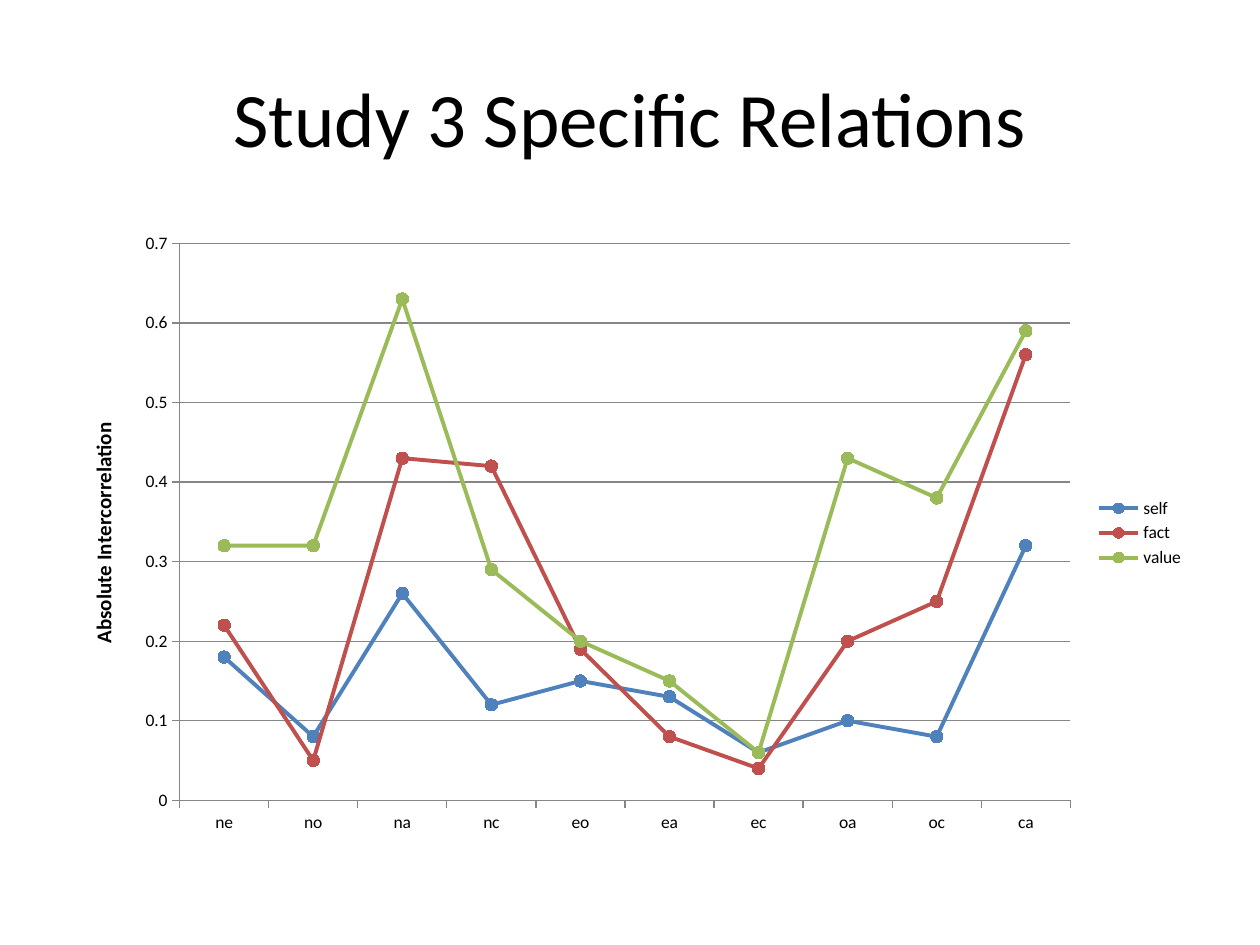
from pptx import Presentation
from pptx.chart.data import CategoryChartData
from pptx.dml.color import RGBColor
from pptx.enum.chart import XL_CHART_TYPE as ChartType
from pptx.enum.chart import XL_LEGEND_POSITION as LegendPosition
from pptx.enum.chart import XL_MARKER_STYLE as MarkerStyle
from pptx.enum.chart import XL_TICK_MARK as TickMark
from pptx.enum.text import MSO_ANCHOR as Anchor
from pptx.enum.text import PP_ALIGN as Align
from pptx.util import Emu, Pt

PX_PER_INCH = 126
FONT = "Calibri"
BLACK = "000000"
AXIS_GREY = "868686"
TRAIT_PAIRS = ["ne", "no", "na", "nc", "eo", "ea", "ec", "oa", "oc", "ca"]
RATINGS = [
    ("self", "4F81BD", [0.18, 0.08, 0.26, 0.12, 0.15, 0.13, 0.06, 0.1, 0.08, 0.32]),
    ("fact", "C0504D", [0.22, 0.05, 0.43, 0.42, 0.19, 0.08, 0.04, 0.2, 0.25, 0.56]),
    ("value", "9BBB59", [0.32, 0.32, 0.63, 0.29, 0.2, 0.15, 0.06, 0.43, 0.38, 0.59]),
]


def px(length):
    return Emu(round(length * 914400 / PX_PER_INCH))


def color(hex_value):
    return RGBColor.from_string(hex_value)


def style_font(font, size, bold=False):
    font.name = FONT
    font.size = Pt(size)
    font.bold = bold
    font.color.rgb = color(BLACK)


def write_text(frame, text, size, bold=False, align=Align.CENTER):
    paragraph = frame.paragraphs[0]
    paragraph.alignment = align
    run = paragraph.add_run()
    run.text = text
    style_font(run.font, size, bold)


def add_title(slide, text, left, top, width, height):
    title = slide.shapes.title
    title.left, title.top = px(left), px(top)
    title.width, title.height = px(width), px(height)
    title.text_frame.word_wrap = True
    title.text_frame.vertical_anchor = Anchor.MIDDLE
    write_text(title.text_frame, text, size=44)


def style_line(line, hex_value, width):
    line.color.rgb = color(hex_value)
    line.width = Pt(width)


def style_axis(axis):
    axis.major_tick_mark = TickMark.OUTSIDE
    axis.minor_tick_mark = TickMark.NONE
    style_line(axis.format.line, AXIS_GREY, 0.75)
    style_font(axis.tick_labels.font, 10)


def style_series(series, hex_value):
    series.smooth = False
    style_line(series.format.line, hex_value, 2.25)
    marker = series.marker
    marker.style = MarkerStyle.CIRCLE
    marker.size = 7
    marker.format.fill.solid()
    marker.format.fill.fore_color.rgb = color(hex_value)
    marker.format.line.fill.background()


def add_relations_chart(slide, left, top, width, height):
    relations = CategoryChartData()
    relations.categories = TRAIT_PAIRS
    for name, _, values in RATINGS:
        relations.add_series(name, values)
    chart = slide.shapes.add_chart(
        ChartType.LINE_MARKERS, px(left), px(top), px(width), px(height), relations
    ).chart
    style_font(chart.font, 10)
    chart.has_title = False
    chart.has_legend = True
    chart.legend.position = LegendPosition.RIGHT
    chart.legend.include_in_layout = False
    style_font(chart.legend.font, 10)
    chart.plots[0].vary_by_categories = False

    style_axis(chart.category_axis)
    correlation = chart.value_axis
    style_axis(correlation)
    correlation.minimum_scale, correlation.maximum_scale = 0, 0.7
    correlation.major_unit = 0.1
    correlation.has_major_gridlines = True
    style_line(correlation.major_gridlines.format.line, AXIS_GREY, 0.75)
    write_text(correlation.axis_title.text_frame, "Absolute Intercorrelation", size=12, bold=True)

    for series, (_, hex_value, _) in zip(chart.plots[0].series, RATINGS):
        style_series(series, hex_value)


def main():
    deck = Presentation()
    deck.slide_width, deck.slide_height = px(1260), px(945)
    slide = deck.slides.add_slide(deck.slide_layouts[5])
    slide.background.fill.solid()
    slide.background.fill.fore_color.rgb = color("FFFFFF")
    add_title(slide, "Study 3 Specific Relations", 63, 38, 1134, 158)
    add_relations_chart(slide, 63, 221, 1134, 624)
    deck.save("out.pptx")


if __name__ == "__main__":
    main()
